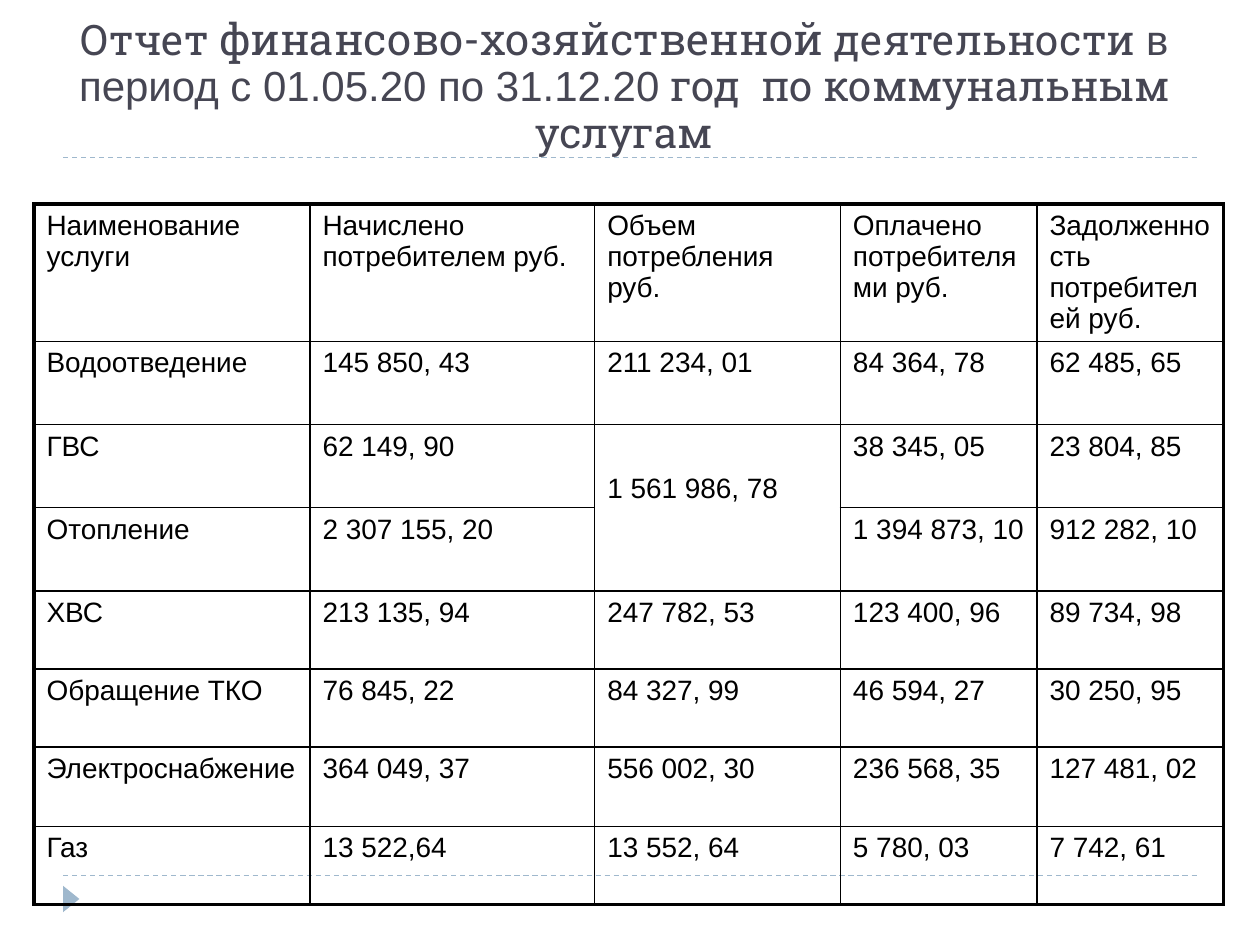
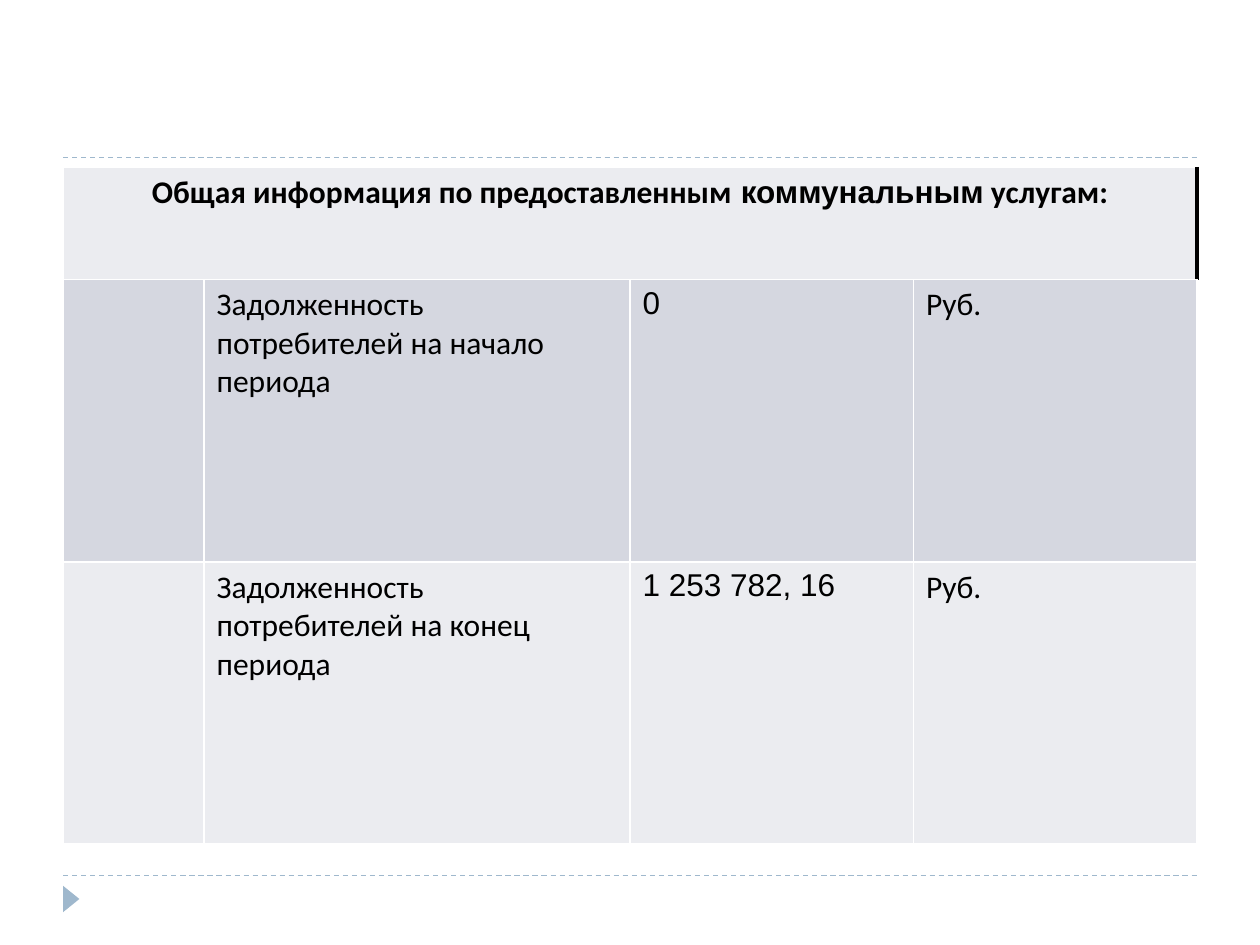
from dataclasses import dataclass
from typing import Callable, NamedTuple

from lxml.etree import SubElement
from pptx import Presentation
from pptx.dml.color import RGBColor
from pptx.enum.dml import MSO_LINE
from pptx.enum.shapes import MSO_CONNECTOR, MSO_SHAPE
from pptx.enum.text import MSO_ANCHOR, PP_ALIGN
from pptx.oxml import parse_xml
from pptx.oxml.ns import nsdecls, qn
from pptx.util import Inches, Pt


@dataclass(frozen=True)
class Theme:
    ink: str = "000000"
    head: str = "464653"
    rule: str = "9FB8CD"
    white: str = "FFFFFF"
    light: str = "EBECF0"
    dark: str = "D5D7E0"
    sans: str = "Arial"
    body: str = "Calibri"
    slab: str = "Roboto Slab"
    title: float = 24
    wide: float = 25
    small: float = 16
    large: float = 18
    thin: float = 1
    thick: float = 2.25


T = Theme()


class Run(NamedTuple):
    text: str
    face: str
    size: float


class Edge(NamedTuple):
    color: str
    width: float


@dataclass
class Grid:
    left: float
    top: float
    cols: list[float]
    rows: list[float]
    edge: Callable[[int, int, str], Edge]


def style(font, face: str, size: float, color: str, bold: bool = False) -> None:
    font.name, font.size, font.bold = face, Pt(size), bold
    font.color.rgb = RGBColor.from_string(color)


def add_runs(par, runs: list[Run], color: str, bold: bool = False) -> None:
    for item in runs:
        run = par.add_run()
        run.text = item.text
        style(run.font, item.face, item.size, color, bold)


# Shared frame: two dashed rules and the corner mark
def add_frame(slide) -> None:
    for y in (6.95, 1.25):
        line = slide.shapes.add_connector(
            MSO_CONNECTOR.STRAIGHT, Inches(0.5), Inches(y), Inches(9.5), Inches(y))
        line.line.color.rgb = RGBColor.from_string(T.rule)
        line.line.width = Pt(0.75)
        line.line.dash_style = MSO_LINE.DASH
        SubElement(line._element.spPr, qn("a:effectLst"))
    mark = slide.shapes.add_shape(
        MSO_SHAPE.ISOSCELES_TRIANGLE, Inches(0.46), Inches(7.07), Inches(0.21), Inches(0.13))
    mark.rotation = 90
    mark.shadow.inherit = False
    mark.fill.solid()
    mark.fill.fore_color.rgb = RGBColor.from_string(T.rule)
    mark.line.fill.background()


# Tables
def set_edge(cell, side: str, edge: Edge, place: int) -> None:
    line = parse_xml(
        f'<a:ln{side} {nsdecls("a")} w="{Pt(edge.width)}"><a:solidFill>'
        f'<a:srgbClr val="{edge.color}"/></a:solidFill></a:ln{side}>')
    cell._tc.get_or_add_tcPr().insert(place, line)


def add_grid(slide, grid: Grid):
    frame = slide.shapes.add_table(
        len(grid.rows), len(grid.cols), Inches(grid.left), Inches(grid.top),
        Inches(sum(grid.cols)), Inches(sum(grid.rows)))
    table = frame.table
    table.first_row = table.horz_banding = False
    for col, width in zip(table.columns, grid.cols):
        col.width = Inches(width)
    for row, height in zip(table.rows, grid.rows):
        row.height = Inches(height)
    for r in range(len(grid.rows)):
        for c in range(len(grid.cols)):
            cell = table.cell(r, c)
            cell.fill.background()
            for place, side in enumerate("LRTB"):
                set_edge(cell, side, grid.edge(r, c, side), place)
    return table


# Slide 1: charges by service
HEADS = ["Наименование услуги", "Начислено потребителем руб.", "Объем потребления руб.",
         "Оплачено потребителями руб.", "Задолженность потребителей руб."]
COSTS = [
    ["Водоотведение", "145 850, 43", "211 234, 01", "84 364, 78", "62 485, 65"],
    ["ГВС", "62 149, 90", "1 561 986, 78", "38 345, 05", "23 804, 85"],
    ["Отопление", "2 307 155, 20", "", "1 394 873, 10", "912 282, 10"],
    ["ХВС", "213 135, 94", "247 782, 53", "123 400, 96", "89 734, 98"],
    ["Обращение ТКО", "76 845, 22", "84 327, 99", "46 594, 27", "30 250, 95"],
    ["Электроснабжение", "364 049, 37", "556 002, 30", "236 568, 35", "127 481, 02"],
    ["Газ", "13 522,64", "13 552, 64", "5 780, 03", "7 742, 61"],
]
TITLE = [
    Run("Отчет ", T.slab, T.title),
    Run("финансово-хозяйственной", T.slab, T.wide),
    Run(" деятельности ", T.slab, T.title),
    Run("в период с 01.05.20 по 31.12.20", T.sans, T.title),
    Run(" год  по коммунальным услугам", T.slab, T.title),
]


def cost_edge(r: int, c: int, side: str) -> Edge:
    outer = {"L": c == 0, "R": c == len(HEADS) - 1, "T": r == 0, "B": r == len(COSTS)}
    return Edge(T.ink, T.thick if outer[side] else T.thin)


def add_title(slide) -> None:
    title = slide.shapes.title
    title.left, title.top = Inches(0.27), Inches(0)
    title.width, title.height = Inches(9.37), Inches(1.28)
    text = title.text_frame
    text.vertical_anchor = MSO_ANCHOR.BOTTOM
    text.margin_bottom = Inches(0.03)
    par = text.paragraphs[0]
    par.alignment = PP_ALIGN.CENTER
    par.line_spacing = 0.92
    add_runs(par, TITLE, T.head)


def cost_slide(deck) -> None:
    slide = deck.slides.add_slide(deck.slide_layouts[5])
    add_frame(slide)
    add_title(slide)
    table = add_grid(slide, Grid(
        0.27, 1.62, [2.19, 2.26, 1.95, 1.56, 1.48],
        [1.09] + [0.66] * 3 + [0.62, 0.62, 0.63, 0.62], cost_edge))
    for r, row in enumerate([HEADS] + COSTS):
        for c, text in enumerate(row):
            if not text:
                continue
            par = table.cell(r, c).text_frame.paragraphs[0]
            par.text = text
            par.space_before = Pt(6)
            style(par.font, T.sans, T.small, T.ink)
    # Heat and hot water share one volume
    joint = table.cell(2, 2)
    joint.merge(table.cell(3, 2))
    joint.margin_top = Inches(0.39)


# Slide 2: debt at start and end
DEBTS = [
    ["", "Задолженность потребителей на начало периода", "0", "Руб."],
    ["", "Задолженность потребителей на конец периода", "1 253 782, 16", "Руб."],
]
BANNER = [
    Run("Общая информация по предоставленным", T.body, T.large),
    Run(" коммунальным", T.sans, T.large),
    Run(" услугам:", T.body, T.large),
]


def debt_edge(r: int, c: int, side: str) -> Edge:
    if r == 0 and c in (0, 3) and side == "R":
        return Edge(T.ink, T.thick)
    return Edge(T.white, T.thin)


def debt_slide(deck) -> None:
    slide = deck.slides.add_slide(deck.slide_layouts[6])
    add_frame(slide)
    table = add_grid(slide, Grid(
        0.5, 1.33, [1.12, 3.38, 2.25, 2.25], [0.89, 2.24, 2.24], debt_edge))
    for r, row in enumerate(table.rows):
        for cell in row.cells:
            cell.fill.solid()
            cell.fill.fore_color.rgb = RGBColor.from_string(T.dark if r % 2 else T.light)
    banner = table.cell(0, 0)
    banner.merge(table.cell(0, 3))
    par = banner.text_frame.paragraphs[0]
    par.alignment = PP_ALIGN.CENTER
    add_runs(par, BANNER, T.ink, bold=True)
    for r, row in enumerate(DEBTS, 1):
        for c, text in enumerate(row):
            if text:
                par = table.cell(r, c).text_frame.paragraphs[0]
                par.text = text
                style(par.font, T.sans if c == 2 else T.body, T.large, T.ink)


def main() -> None:
    deck = Presentation()
    deck.slide_width, deck.slide_height = Inches(10), Inches(7.5)
    cost_slide(deck)
    debt_slide(deck)
    deck.save("out.pptx")


if __name__ == "__main__":
    main()
